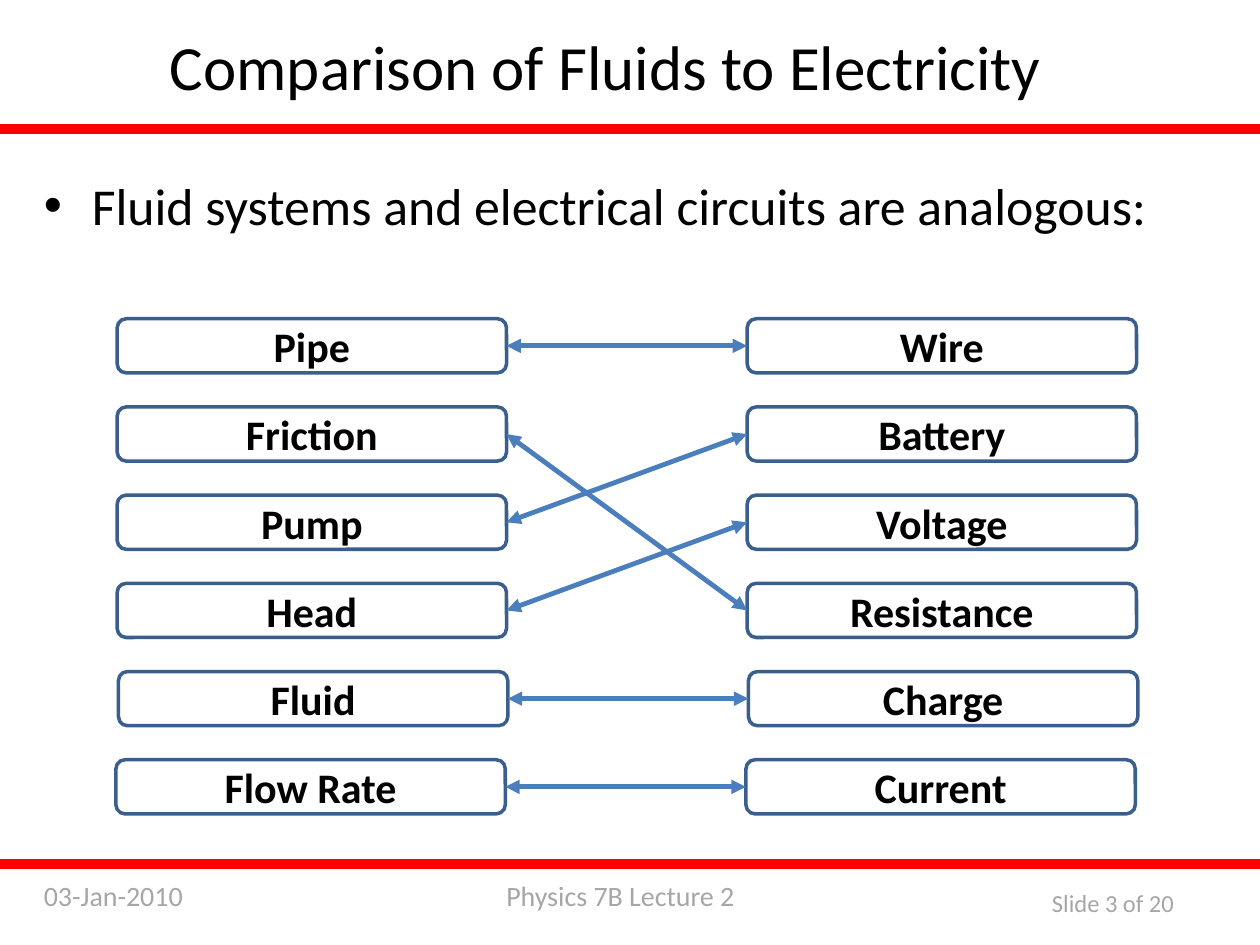
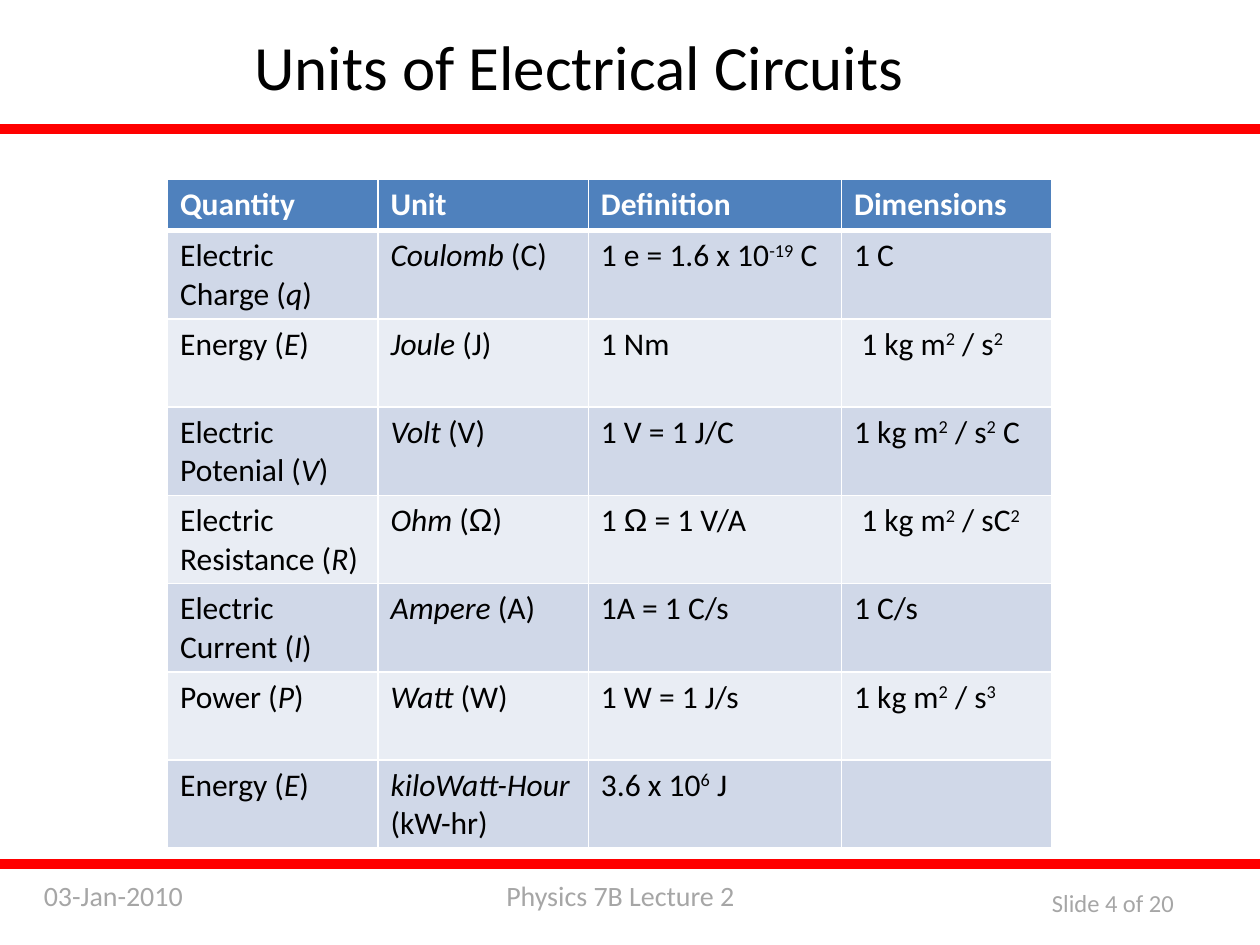
from lxml import etree
from pptx import Presentation
from pptx.dml.color import RGBColor
from pptx.enum.shapes import MSO_CONNECTOR, MSO_SHAPE
from pptx.enum.text import MSO_ANCHOR, MSO_AUTO_SIZE, PP_ALIGN
from pptx.oxml.ns import qn
from pptx.util import Inches, Pt

RECTANGLE = MSO_SHAPE.RECTANGLE
ROUNDED = MSO_SHAPE.ROUNDED_RECTANGLE
STRAIGHT = MSO_CONNECTOR.STRAIGHT
MIDDLE = MSO_ANCHOR.MIDDLE
CENTER = PP_ALIGN.CENTER
GROW = MSO_AUTO_SIZE.SHAPE_TO_FIT_TEXT
RIGHT_SIDE, LEFT_SIDE = 3, 1

BLACK, WHITE, RED, GREY = "000000", "FFFFFF", "FF0000", "A6A6A6"
BOX_LINE, ARROW = "3A5F8C", "4B7EBC"
HEADER_FILL, BAND_FILLS = "4F81BD", ("D0D8E8", "E9EDF4")

TITLE = {"size": 36, "color": BLACK}
BODY = {"size": 29.6, "color": BLACK}
FOOTER = {"size": 16, "color": GREY}
PAGE_NUMBER = {"size": 14, "color": GREY}
BOX_LABEL = {"size": 24, "color": BLACK, "bold": True}
TABLE_HEADER = {"size": 18, "color": WHITE, "bold": True}
TABLE_BODY = {"size": 18, "color": BLACK, "bold": False}

BAND_TOPS = (1, 6.83)
FOOTERS = [
    ("Physics 7B Lecture 2", (3.92, 6.92, 2.04, 0.37), FOOTER),
    ("03-Jan-2010", (0.25, 6.92, 1.67, 0.37), FOOTER),
]

STATEMENT = "Fluid systems and electrical circuits are analogous:"
# fluid term, electrical term, horizontal nudge of the row
TERM_ROWS = [
    ("Pipe", "Wire", 0),
    ("Friction", "Battery", 0),
    ("Pump", "Voltage", 0),
    ("Head", "Resistance", 0),
    ("Fluid", "Charge", 0.01),
    ("Flow Rate", "Current", -0.01),
]
ANALOGIES = {
    "Pipe": "Wire",
    "Friction": "Resistance",
    "Pump": "Battery",
    "Head": "Voltage",
    "Fluid": "Charge",
    "Flow Rate": "Current",
}
TERM_LEFTS, TERM_TOP, TERM_PITCH = (0.93, 5.93), 2.53, 0.7
TERM_WIDTH, TERM_HEIGHT = 3.09, 0.43

# "|" separates runs; a run starting with "_" is italic, with "^" superscript
UNITS = [
    ("Quantity", "Unit", "Definition", "Dimensions"),
    ("Electric Charge (|_q|)", "_Coulomb |(C)", "1 e = 1.6 x 10|^-19| C", "1 C"),
    ("Energy (|_E|)", "_Joule |(J)", "1 Nm", " 1 kg m|^2| / s|^2"),
    ("Electric Potenial (|_V|)", "_Volt |(V)", "1 V = 1 J/C", "1 kg m|^2| / s|^2| C"),
    ("Electric Resistance (|_R|)", "_Ohm |(|Ω|)", "1 |Ω| = 1 V/A", " 1 kg m|^2| / sC|^2"),
    ("Electric Current (|_I|)", "_Ampere |(A)", "1A = 1 C/s", "1 C/s"),
    ("Power (|_P|)", "_Watt |(W)", "1 W = 1 J/s", "1 kg m|^2| / s|^3"),
    ("Energy (|_E|)", "_kiloWatt-Hour\n(kW-hr)", "3.6 x 10|^6| J", ""),
]
COLUMN_WIDTHS = (1.67, 1.67, 2.01, 1.67)
HEADER_HEIGHT, ROW_HEIGHT = 0.41, 0.7


def rgb(color):
    return RGBColor.from_string(color)


def box(*lengths):
    return [Inches(length) for length in lengths]


def style_font(font, style):
    values = {"name": "Calibri", **style}
    values["size"] = Pt(values["size"])
    font.color.rgb = rgb(values.pop("color"))
    for name, value in values.items():
        setattr(font, name, value)


def add_run(paragraph, text, style):
    run = paragraph.add_run()
    run.text = text
    style_font(run.font, style)
    return run


def add_text(slide, text, place, style, wrap=False, auto_size=GROW):
    shape = slide.shapes.add_textbox(*box(*place))
    shape.text_frame.word_wrap = wrap
    shape.text_frame.auto_size = auto_size
    add_run(shape.text_frame.paragraphs[0], text, style)
    return shape


def add_outlined(slide, kind, place, line, fill=None):
    shape = slide.shapes.add_shape(kind, *box(*place))
    shape.shadow.inherit = False
    if fill:
        shape.fill.solid()
        shape.fill.fore_color.rgb = rgb(fill)
    else:
        shape.fill.background()
    shape.line.color.rgb = rgb(line)
    shape.line.width = Pt(2)
    return shape


def add_base_slide(presentation, number, title, title_place):
    slide = presentation.slides.add_slide(presentation.slide_layouts[6])
    for text, place, style in FOOTERS:
        add_text(slide, text, place, style)
    add_text(slide, f"Slide {number} of 20", (8.25, 7, 1.31, 0.34), PAGE_NUMBER)
    for top in BAND_TOPS:
        add_outlined(slide, RECTANGLE, (0, top, 10, 0.05), RED, RED)
    add_text(slide, title, title_place, TITLE)
    return slide


def add_bullet(slide, text):
    shape = add_text(slide, text, (0.25, 1.33, 9.28, 1), BODY, True, MSO_AUTO_SIZE.NONE)
    paragraph = shape.text_frame.paragraphs[0]
    paragraph.space_before = Pt(6)
    properties = paragraph._p.get_or_add_pPr()
    properties.set("marL", str(Inches(0.38)))
    properties.set("indent", str(Inches(-0.38)))
    etree.SubElement(properties, qn("a:buFont"), typeface="Arial")
    etree.SubElement(properties, qn("a:buChar"), char="•")


def add_term(slide, text, left, top):
    shape = add_outlined(slide, ROUNDED, (left, top, TERM_WIDTH, TERM_HEIGHT), BOX_LINE)
    shape.text_frame.vertical_anchor = MIDDLE
    paragraph = shape.text_frame.paragraphs[0]
    paragraph.alignment = CENTER
    add_run(paragraph, text, BOX_LABEL)
    return shape


def add_double_arrow(slide, fluid, electrical):
    connector = slide.shapes.add_connector(STRAIGHT, 0, 0, 0, 0)
    connector.begin_connect(fluid, RIGHT_SIDE)
    connector.end_connect(electrical, LEFT_SIDE)
    connector.line.color.rgb = rgb(ARROW)
    connector.line.width = Pt(2.75)
    line = connector.line._get_or_add_ln()
    for end in ("a:headEnd", "a:tailEnd"):
        etree.SubElement(line, qn(end), type="triangle")
    etree.SubElement(connector._element.spPr, qn("a:effectLst"))


def add_marked_text(paragraph, text, style):
    for part in filter(None, text.split("|")):
        run = add_run(paragraph, part.lstrip("_^"), style)
        run.font.italic = part.startswith("_")
        if part.startswith("^"):
            run.font._element.set("baseline", "30000")
        if part == "Ω":
            run.font.name = "Arial"


def set_borders(cell, bottom):
    properties = cell._tc.get_or_add_tcPr()
    widths = {"a:lnL": 1, "a:lnR": 1, "a:lnT": 1, "a:lnB": bottom}
    for position, (side, width) in enumerate(widths.items()):
        line = etree.Element(qn(side), w=str(Pt(width)))
        fill = etree.SubElement(line, qn("a:solidFill"))
        etree.SubElement(fill, qn("a:srgbClr"), val=WHITE)
        properties.insert(position, line)


def fill_cell(cell, text, row):
    style = TABLE_BODY if row else TABLE_HEADER
    cell.fill.solid()
    cell.fill.fore_color.rgb = rgb(BAND_FILLS[(row - 1) % 2] if row else HEADER_FILL)
    set_borders(cell, 1 if row else 3)
    frame = cell.text_frame
    for index, line in enumerate(text.split("\n")):
        paragraph = frame.add_paragraph() if index else frame.paragraphs[0]
        add_marked_text(paragraph, line, style)


def build_comparison(presentation):
    slide = add_base_slide(presentation, 3, "Comparison of Fluids to Electricity",
                           (1.25, 0.17, 7.18, 0.71))
    add_bullet(slide, STATEMENT)
    terms = {}
    for row, (fluid, electrical, nudge) in enumerate(TERM_ROWS):
        for text, left in zip((fluid, electrical), TERM_LEFTS):
            terms[text] = add_term(slide, text, left + nudge, TERM_TOP + row * TERM_PITCH)
    for fluid, electrical in ANALOGIES.items():
        add_double_arrow(slide, terms[fluid], terms[electrical])


def build_units(presentation):
    slide = add_base_slide(presentation, 4, "Units of Electrical Circuits",
                           (1.92, 0.17, 5.4, 0.71))
    heights = [HEADER_HEIGHT] + [ROW_HEIGHT] * (len(UNITS) - 1)
    place = box(1.33, 1.42, sum(COLUMN_WIDTHS), sum(heights))
    table = slide.shapes.add_table(len(UNITS), len(COLUMN_WIDTHS), *place).table
    for column, width in zip(table.columns, COLUMN_WIDTHS):
        column.width = Inches(width)
    for row, (height, texts) in enumerate(zip(heights, UNITS)):
        table.rows[row].height = Inches(height)
        for column, text in enumerate(texts):
            fill_cell(table.cell(row, column), text, row)


def main():
    presentation = Presentation()
    presentation.slide_width, presentation.slide_height = box(10, 7.5)
    build_comparison(presentation)
    build_units(presentation)
    presentation.save("out.pptx")


if __name__ == "__main__":
    main()
